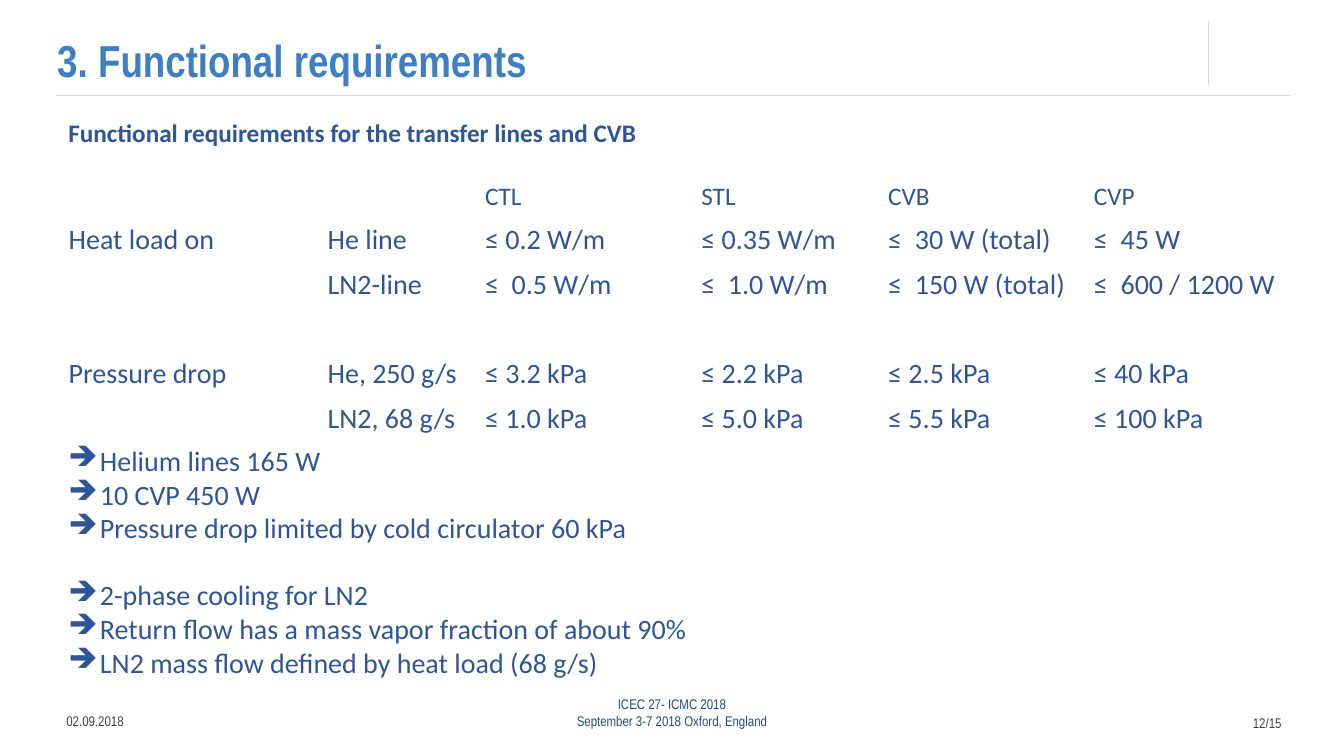
from lxml import etree
from pptx import Presentation
from pptx import util as u
from pptx.dml import color
from pptx.enum import shapes, text
from pptx.oxml import ns

Pt = u.Pt
NAVY = "2F5597"
GREY = "404040"
NARROW = "Arial Narrow"
COLUMN_WIDTHS = [185, 112.5, 154.5, 133.5, 147, 149]
HEADER_HEIGHT = 29.5
ROW_HEIGHT = 31.9
REQUIREMENTS = [
    ["", "", "CTL", "STL", "CVB", "CVP"],
    ["Heat load on", "He line", "≤ 0.2 W/m", "≤ 0.35 W/m", "≤  30 W (total)", "≤  45 W"],
    ["", "LN2-line", "≤  0.5 W/m", "≤  1.0 W/m", "≤  150 W (total)", "≤  600 / 1200 W"],
    [""] * 6,
    ["Pressure drop", "He, 250 g/s", "≤ 3.2 kPa", "≤ 2.2 kPa", "≤ 2.5 kPa", "≤ 40 kPa"],
    ["", "LN2, 68 g/s", "≤ 1.0 kPa", "≤ 5.0 kPa", "≤ 5.5 kPa", "≤ 100 kPa"],
    [""] * 6,
    [""] * 6,
]
HELIUM_NOTES = [
    "Helium lines 165 W",
    "10 CVP 450 W",
    "Pressure drop limited by cold circulator 60 kPa",
]
NITROGEN_NOTES = [
    "2-phase cooling for LN2",
    "Return flow has a mass vapor fraction of about 90%",
    "LN2 mass flow defined by heat load (68 g/s)",
]


def rgb(value):
    return color.RGBColor.from_string(value)


def write(para, content, size=20, font="Calibri", fill=NAVY, bold=False,
          align=None, bullet=None, before=0, spacing=None):
    if bullet:
        properties = para._p.get_or_add_pPr()
        properties.set("marL", str(Pt(22.5)))
        properties.set("indent", str(-Pt(22.5)))
        etree.SubElement(properties, ns.qn("a:buChar")).set("char", bullet)
    if align is not None:
        para.alignment = align
    if before:
        para.space_before = Pt(before)
    if spacing:
        para.line_spacing = spacing
    span = para.add_run()
    span.text = content
    span.font.size = Pt(size)
    span.font.name = font
    span.font.bold = bold
    span.font.color.rgb = rgb(fill)


def add_box(page, left, top, width, height, anchor=text.MSO_ANCHOR.TOP):
    box = page.shapes.add_textbox(Pt(left), Pt(top), Pt(width), Pt(height))
    box.text_frame.word_wrap = True
    box.text_frame.vertical_anchor = anchor
    return box.text_frame


def add_lines(frame, lines, **style):
    for index, line in enumerate(lines):
        para = frame.add_paragraph() if index else frame.paragraphs[0]
        write(para, line, **style)


def add_rule(page, x1, y1, x2, y2):
    rule = page.shapes.add_connector(
        shapes.MSO_CONNECTOR.STRAIGHT, Pt(x1), Pt(y1), Pt(x2), Pt(y2))
    rule.line.color.rgb = rgb("D9D9D9")
    rule.line.width = Pt(1)
    etree.SubElement(rule._element.spPr, ns.qn("a:effectLst"))


def add_requirements(page, left, top):
    height = HEADER_HEIGHT + ROW_HEIGHT * (len(REQUIREMENTS) - 1)
    table = page.shapes.add_table(
        len(REQUIREMENTS), len(COLUMN_WIDTHS), Pt(left), Pt(top),
        Pt(sum(COLUMN_WIDTHS)), Pt(height)).table
    table.horz_banding = False
    for column, width in zip(table.columns, COLUMN_WIDTHS):
        column.width = Pt(width)
    for index, values in enumerate(REQUIREMENTS):
        table.rows[index].height = Pt(ROW_HEIGHT if index else HEADER_HEIGHT)
        for position, value in enumerate(values):
            cell = table.cell(index, position)
            cell.fill.background()
            if value:
                write(cell.text_frame.paragraphs[0], value, size=20 if index else 18)


def add_notes(page):
    frame = add_box(page, 41.8, 313.2, 521.3, 177.1)
    add_lines(frame, HELIUM_NOTES, bullet="➔")
    for index, note in enumerate(NITROGEN_NOTES):
        write(frame.add_paragraph(), note, bullet="➔", before=0 if index else 24)


def add_footer(page):
    middle = text.MSO_ANCHOR.MIDDLE
    small = dict(size=10, font=NARROW)
    add_lines(add_box(page, 40.3, 500.4, 85, 28.8, middle), ["02.09.2018"], fill=GREY, **small)
    add_lines(add_box(page, 142.6, 494.6, 674.6, 28.8, middle),
              ["ICEC 27- ICMC 2018", "September 3-7 2018 Oxford, England"],
              fill="1F4E79", align=text.PP_ALIGN.CENTER, **small)
    add_lines(add_box(page, 837.4, 501.8, 85, 28.8, middle), ["12/15"],
              fill=GREY, align=text.PP_ALIGN.RIGHT, **small)


def main():
    deck = Presentation()
    deck.slide_width = Pt(960)
    deck.slide_height = Pt(540)
    page = deck.slides.add_slide(deck.slide_layouts[6])
    add_rule(page, 40.3, 68.4, 922.3, 68.4)
    add_rule(page, 863.3, 15.1, 863.3, 60.5)
    add_lines(add_box(page, 33.8, 15.1, 752.4, 50.4, text.MSO_ANCHOR.BOTTOM),
              ["3. Functional requirements"],
              size=32, font=NARROW, fill="3F7EC1", bold=True, spacing=0.9)
    add_footer(page)
    add_requirements(page, 41.8, 126)
    add_lines(add_box(page, 41.8, 80.6, 521.3, 28.8),
              ["Functional requirements for the transfer lines and CVB"], size=18, bold=True)
    add_notes(page)
    deck.save("out.pptx")


if __name__ == "__main__":
    main()
